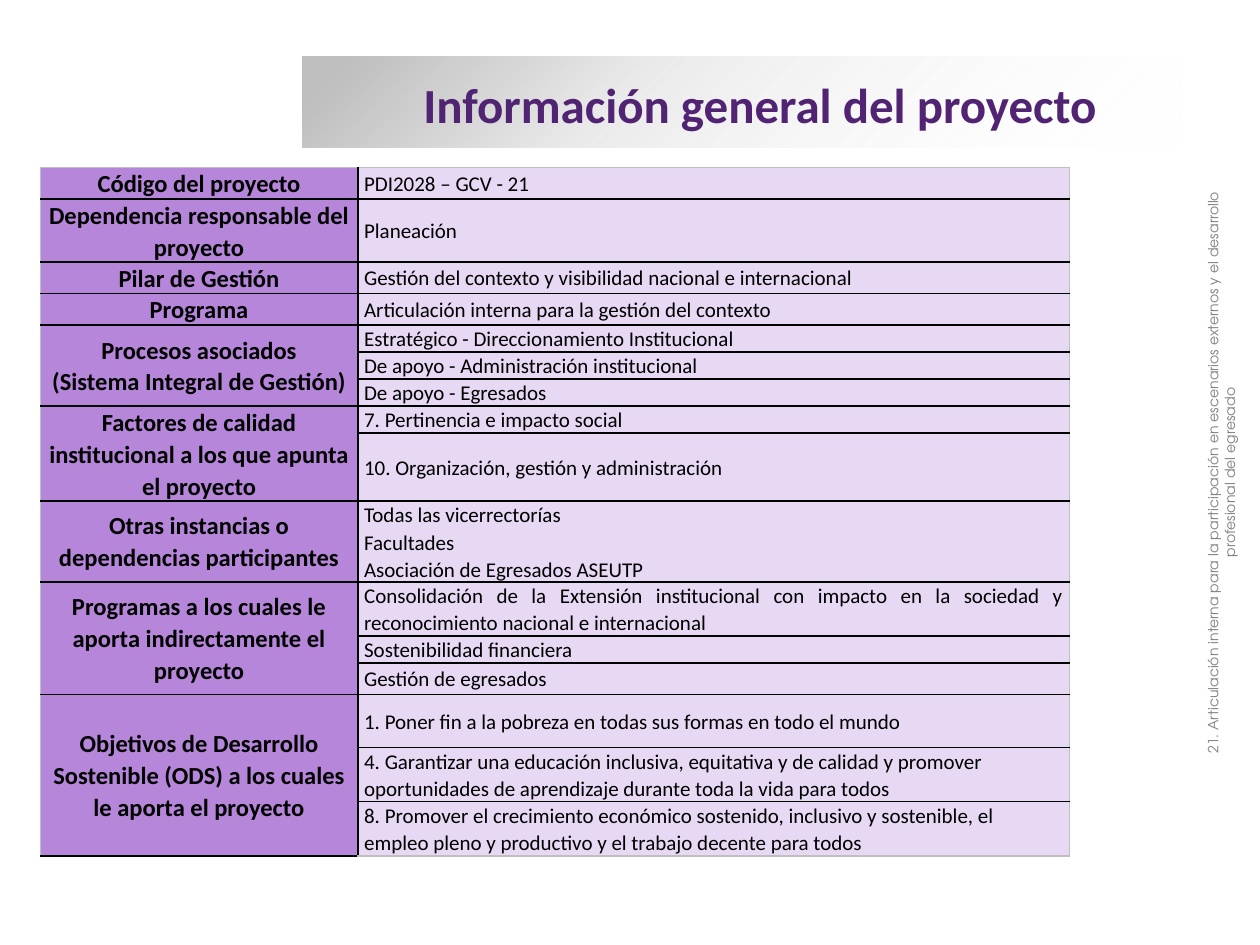
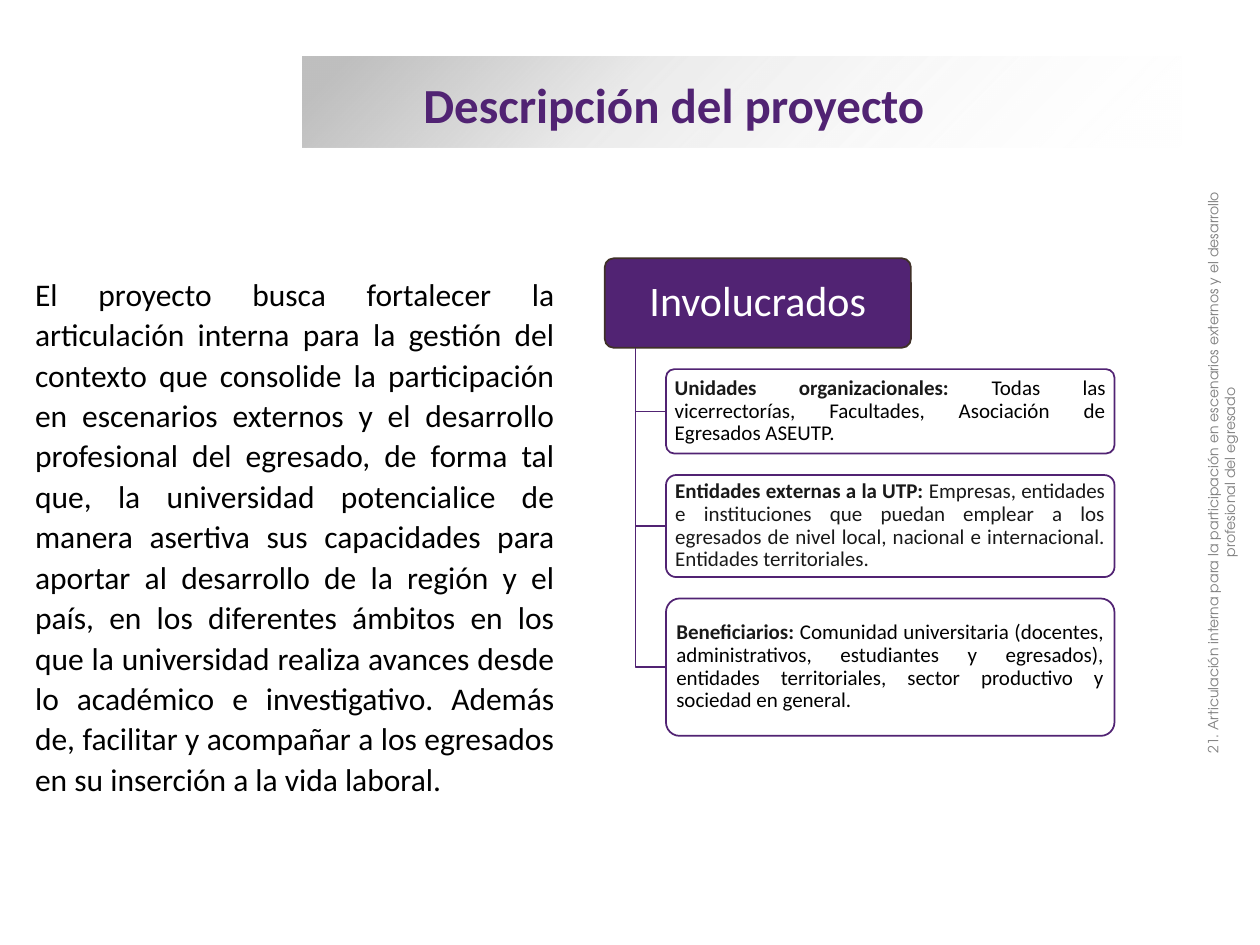
from lxml import etree
from pptx import Presentation
from pptx import util as u
from pptx.dml.color import RGBColor
from pptx.enum import shapes, text
from pptx.oxml import parse_xml
from pptx.oxml.ns import nsdecls, qn

SLIDE_W, SLIDE_H = u.Inches(10), u.Inches(7.5)
COLUMN, ROW = SLIDE_W / 100, SLIDE_H / 75  # grid of 100 columns by 75 rows

PURPLE = RGBColor(0x51, 0x23, 0x73)
LABEL_FILL = RGBColor(0xB6, 0x86, 0xDA)
VALUE_FILL = RGBColor(0xE7, 0xD8, 0xF4)
BROWN = RGBColor(0x3F, 0x30, 0x29)
SILVER = RGBColor(0xBF, 0xBF, 0xBF)
GREY = RGBColor(0x80, 0x80, 0x80)
INK = RGBColor(0x19, 0x19, 0x19)
BLACK = RGBColor(0, 0, 0)
WHITE = RGBColor(0xFF, 0xFF, 0xFF)

BODY_FONT, FOOTER_FONT = "Calibri", "TeX Gyre Adventor"
LEFT, CENTER, JUSTIFY = (text.PP_ALIGN.LEFT, text.PP_ALIGN.CENTER,
                         text.PP_ALIGN.JUSTIFY)
TOP, MIDDLE = text.MSO_ANCHOR.TOP, text.MSO_ANCHOR.MIDDLE

FOOTER = ("21. Articulación interna para la participación en escenarios externos "
          "y el desarrollo profesional del egresado")

# Label, alignment of the values, and (row height, value) pairs
PROJECT_DATA = [
    ("Código del proyecto", LEFT, [(2.5, "PDI2028 – GCV - 21")]),
    ("Dependencia responsable del proyecto", LEFT, [(5, "Planeación")]),
    ("Pilar de Gestión", LEFT,
     [(2.5, "Gestión del contexto y visibilidad nacional e internacional")]),
    ("Programa", JUSTIFY,
     [(2.5, "Articulación interna para la gestión del contexto")]),
    ("Procesos asociados\v(Sistema Integral de Gestión)", LEFT,
     [(2.1, "Estratégico - Direccionamiento Institucional"),
      (2.1, "De apoyo - Administración institucional"),
      (2.1, "De apoyo - Egresados")]),
    ("Factores de calidad institucional a los que apunta el proyecto", LEFT,
     [(2.1, "7. Pertinencia e impacto social"),
      (5.4, "10. Organización, gestión y administración")]),
    ("Otras instancias o dependencias participantes", JUSTIFY,
     [(6.4, "Todas las vicerrectorías\nFacultades\nAsociación de Egresados ASEUTP")]),
    ("Programas a los cuales le aporta indirectamente el proyecto", JUSTIFY,
     [(4.3, "Consolidación de la Extensión institucional con impacto en la "
            "sociedad y reconocimiento nacional e internacional"),
      (2.1, "Sostenibilidad financiera"),
      (2.5, "Gestión de egresados")]),
    ("Objetivos de Desarrollo Sostenible (ODS) a los cuales le aporta el proyecto",
     LEFT,
     [(4.2, "1. Poner fin a la pobreza en todas sus formas en todo el mundo"),
      (4.3, "4. Garantizar una educación inclusiva, equitativa y de calidad y "
            "promover oportunidades de aprendizaje durante toda la vida para todos"),
      (4.3, "8. Promover el crecimiento económico sostenido, inclusivo y "
            "sostenible, el empleo pleno y productivo y el trabajo decente para "
            "todos")]),
]

DESCRIPTION = (
    "El proyecto busca fortalecer la articulación interna para la gestión del "
    "contexto que consolide la participación en escenarios externos y el "
    "desarrollo profesional del egresado, de forma tal que, la universidad "
    "potencialice de manera asertiva sus capacidades para aportar al desarrollo "
    "de la región y el país, en los diferentes ámbitos en los que la universidad "
    "realiza avances desde lo académico e investigativo. Además de, facilitar y "
    "acompañar a los egresados en su inserción a la vida laboral.")

# Box height, heading, detail and its colour
INVOLVED = [
    (6.7, "Unidades organizacionales: ",
     "Todas las vicerrectorías, Facultades, Asociación de Egresados ASEUTP.", BLACK),
    (8.1, "Entidades externas a la UTP: ",
     "Empresas, entidades e instituciones que puedan emplear a los egresados de "
     "nivel local, nacional e internacional. Entidades territoriales.", INK),
    (10.9, "Beneficiarios: ",
     "Comunidad universitaria (docentes, administrativos, estudiantes y "
     "egresados), entidades territoriales, sector productivo y sociedad en "
     "general.", BLACK),
]


def grid(left, top, width, height):
    """Turn columns and rows into lengths."""
    return (u.Emu(int(left * COLUMN)), u.Emu(int(top * ROW)),
            u.Emu(int(width * COLUMN)), u.Emu(int(height * ROW)))


def write(holder, content, size=12, color=BLACK, bold=False, font=BODY_FONT,
          align=LEFT, anchor=TOP, spacing=None, insets=None):
    """Fill a shape or cell; content is a string or (text, bold, color) runs."""
    frame = holder.text_frame
    frame.word_wrap = True
    # Cells carry their own anchor and margins, shapes keep them in the frame
    box = holder if hasattr(holder, "is_merge_origin") else frame
    box.vertical_anchor = anchor
    if insets:
        box.margin_left = box.margin_right = u.Inches(insets[0])
        box.margin_top = box.margin_bottom = u.Inches(insets[1])
    if isinstance(content, str):
        lines = [[(line, bold, color)] for line in content.split("\n")]
    else:
        lines = [content]
    for number, runs in enumerate(lines):
        paragraph = frame.add_paragraph() if number else frame.paragraphs[0]
        paragraph.alignment = align
        if spacing:
            paragraph.line_spacing = spacing
        for words, run_bold, run_color in runs:
            for part, piece in enumerate(words.split("\v")):
                if part:
                    paragraph.add_line_break()
                run = paragraph.add_run()
                run.text = piece
                run.font.name, run.font.size = font, u.Pt(size)
                run.font.bold = run_bold
                run.font.color.rgb = run_color


def add_box(slide, kind, place, fill=None, line=None):
    box = slide.shapes.add_shape(kind, *grid(*place))
    box.shadow.inherit = False
    if fill is not None:
        box.fill.solid()
        box.fill.fore_color.rgb = fill
    if line is None:
        box.line.fill.background()
    else:
        box.line.color.rgb = line
        box.line.width = u.Pt(1)
    return box


def add_title_band(slide):
    band = add_box(slide, shapes.MSO_SHAPE.RECTANGLE, (24, 4.5, 69.8, 7.2))
    stops = "".join(
        f'<a:gs pos="{at * 1000}"><a:srgbClr val="{color}">'
        f'<a:alpha val="{alpha * 1000}"/></a:srgbClr></a:gs>'
        for at, color, alpha in ((5, SILVER, 100), (37, SILVER, 31), (100, WHITE, 0)))
    gradient = parse_xml(f'<a:gradFill {nsdecls("a")}><a:gsLst>{stops}</a:gsLst>'
                         '<a:lin ang="2700000" scaled="0"/></a:gradFill>')
    band._element.spPr.find(qn("a:prstGeom")).addnext(gradient)
    slide.shapes._spTree.insert(2, band._element)  # behind the title


def add_text(slide, place, content, **style):
    box = slide.shapes.add_textbox(*grid(*place))
    write(box, content, **style)
    return box


def add_project_slide(deck, heading):
    """Add a slide with the shared band, title and side footer."""
    slide = deck.slides.add_slide(deck.slide_layouts[5])
    title = slide.shapes.title
    title.left, title.top, title.width, title.height = grid(32.6, 5.4, 62, 5.7)
    write(title, heading, size=28, color=PURPLE, bold=True, anchor=MIDDLE)
    title.text_frame.auto_size = text.MSO_AUTO_SIZE.NONE
    add_title_band(slide)
    footer = add_text(slide, (73.4, 35, 48.4, 5), FOOTER, size=8, color=GREY,
                      font=FOOTER_FONT, align=CENTER)
    footer.rotation = 270
    return slide


def set_borders(cell, **colors):
    """Draw the sides L, R, T and B, which must precede the cell's fill."""
    properties = cell._tc.get_or_add_tcPr()
    for order, side in enumerate("LRTB"):
        line = etree.Element(qn(f"a:ln{side}"), w=str(u.Pt(1)))
        fill = etree.SubElement(line, qn("a:solidFill"))
        etree.SubElement(fill, qn("a:srgbClr"), val=str(colors[side]))
        properties.insert(order, line)


def add_project_table(slide):
    heights = [height for _, _, values in PROJECT_DATA for height, _ in values]
    table = slide.shapes.add_table(
        len(heights), 2, *grid(3.2, 13.3, 81.7, sum(heights))).table
    table.first_row = table.horz_banding = False
    for column, width in zip(table.columns, (25.2, 56.5)):
        column.width = int(width * COLUMN)
    for row, height in zip(table.rows, heights):
        row.height = int(height * ROW)

    last = len(heights) - 1
    for r in range(len(heights)):
        for c, fill in enumerate((LABEL_FILL, VALUE_FILL)):
            cell = table.cell(r, c)
            cell.fill.solid()
            cell.fill.fore_color.rgb = fill
            set_borders(cell, L=BLACK if c else SILVER, R=SILVER if c else BLACK,
                        T=BLACK if r else SILVER, B=SILVER if r == last else BLACK)

    first = 0
    for label, align, values in PROJECT_DATA:
        label_cell = table.cell(first, 0)
        if len(values) > 1:
            label_cell.merge(table.cell(first + len(values) - 1, 0))
        write(label_cell, label, size=14, bold=True, align=CENTER, anchor=MIDDLE,
              spacing=1.07, insets=(0.04, 0))
        for r, (_, value) in enumerate(values, first):
            write(table.cell(r, 1), value, align=align, anchor=MIDDLE,
                  spacing=1.07, insets=(0.05, 0))
        first += len(values)


def add_branch(slide, trunk, start, level, end):
    """Draw an elbow line down the trunk and across to a box."""
    points = [grid(x, y, 0, 0)[:2]
              for x, y in ((trunk, start), (trunk, level), (end, level))]
    builder = slide.shapes.build_freeform(*points[0])
    builder.add_line_segments(points[1:], close=False)
    branch = builder.convert_to_shape()
    branch.shadow.inherit = False
    branch.fill.background()
    branch.line.color.rgb = PURPLE
    branch.line.width = u.Pt(1)


def add_involved_tree(slide):
    rounded = shapes.MSO_SHAPE.ROUNDED_RECTANGLE
    left, top, width, height, gap = 48, 20.5, 24.3, 7.1, 1.7
    trunk, branch_end = left + width / 10, left + width / 5
    root = add_box(slide, rounded, (left, top, width, height), PURPLE, BROWN)
    root.adjustments[0] = 0.1
    write(root, "Involucrados", size=24, color=WHITE, align=CENTER, anchor=MIDDLE,
          spacing=0.9, insets=(0.07, 0.05))
    root_bottom = top + height
    box_top = root_bottom + gap
    for box_height, heading, detail, color in INVOLVED:
        add_branch(slide, trunk, root_bottom, box_top + box_height / 2, branch_end)
        box = add_box(slide, rounded, (branch_end, box_top, 35.6, box_height),
                      WHITE, PURPLE)
        box.adjustments[0] = 0.1
        write(box, [(heading, True, INK), (detail, False, color)], align=JUSTIFY,
              anchor=MIDDLE, spacing=0.9, insets=(0.05, 0.04))
        box_top += box_height + gap


def main():
    deck = Presentation()
    deck.slide_width, deck.slide_height = SLIDE_W, SLIDE_H

    add_project_table(add_project_slide(deck, "Información general del proyecto"))

    description = add_project_slide(deck, "Descripción del proyecto")
    add_involved_tree(description)
    add_text(description, (1.8, 21.1, 43.2, 43.1), DESCRIPTION, size=18,
             align=JUSTIFY, spacing=1.07)

    deck.save("out.pptx")


if __name__ == "__main__":
    main()
